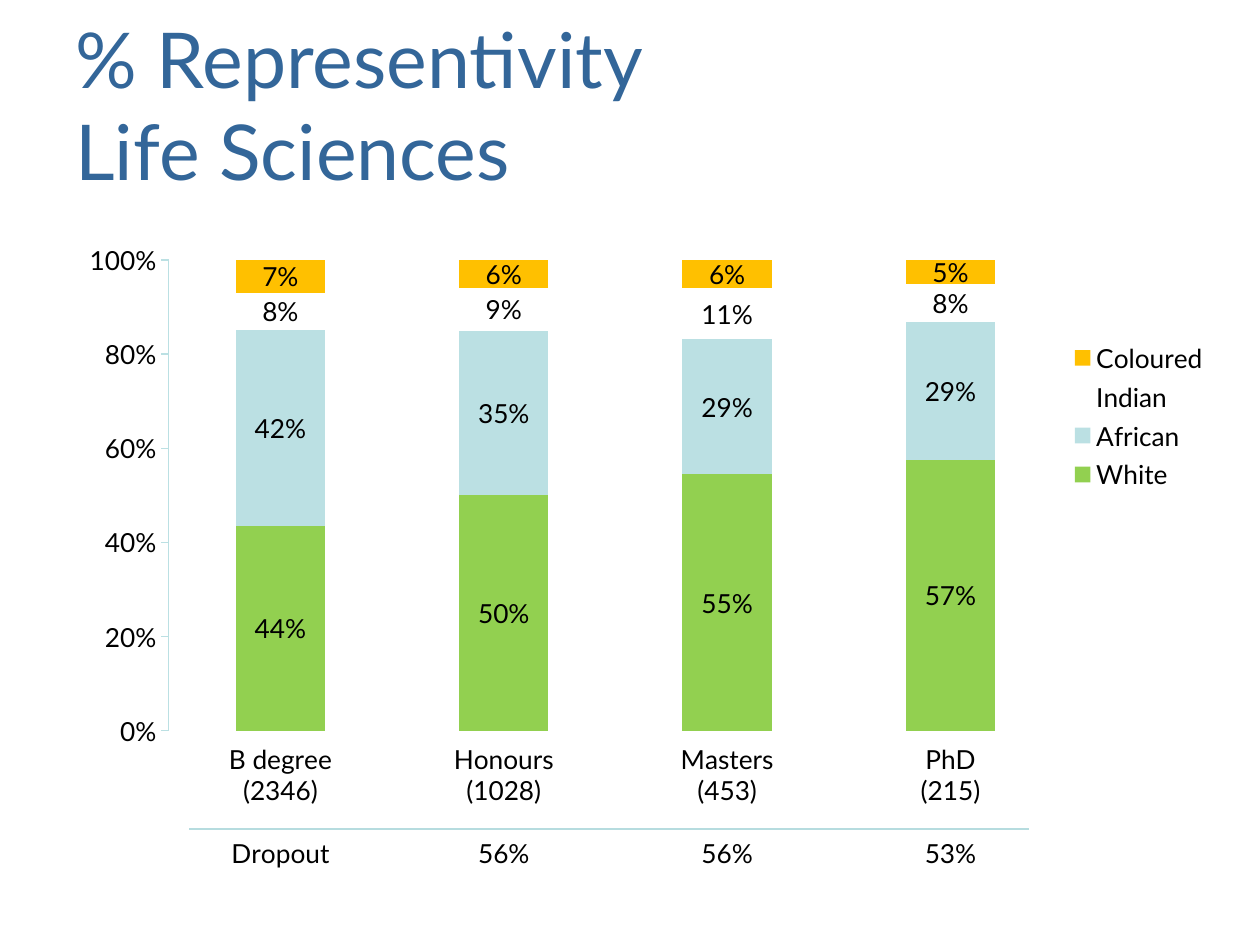
from lxml import etree
from pptx import Presentation
from pptx.chart.data import CategoryChartData as Data
from pptx.dml.color import RGBColor as Rgb
from pptx.enum.chart import XL_CHART_TYPE as Kind
from pptx.enum.chart import XL_LABEL_POSITION as Spot
from pptx.enum.chart import XL_LEGEND_POSITION as Side
from pptx.enum.chart import XL_TICK_MARK as Tick
from pptx.enum.shapes import MSO_CONNECTOR as Link
from pptx.enum.text import MSO_ANCHOR as Anchor
from pptx.oxml.ns import qn
from pptx.util import Cm, Pt

FONT = "Lato"
HUES = {
    "title": "336699", "text": "000000", "axis": "BBE0E3", "rule": "B6DCDF",
    "White": "92D050", "African": "BBE0E3", "Indian": "FFFFFF",
    "Coloured": "FFC000",
}
# Level, head count, dropout
LEVELS = [
    ("B degree", 2346, "Dropout"), ("Honours", 1028, "56%"),
    ("Masters", 453, "56%"), ("PhD", 215, "53%"),
]
SHARES = {
    "White": (0.44, 0.50, 0.55, 0.57),
    "African": (0.42, 0.35, 0.29, 0.29),
    "Indian": (0.08, 0.09, 0.11, 0.08),
    "Coloured": (0.07, 0.06, 0.06, 0.05),
}


def hue(name):
    return Rgb.from_string(HUES[name])


def style(font, size, name="text"):
    font.name, font.size = FONT, Pt(size)
    font.color.rgb = hue(name)


def add_title(slide, lines):
    box = slide.shapes.add_textbox(Cm(1.27), Cm(0.08), Cm(16.94), Cm(4.01))
    frame = box.text_frame
    frame.word_wrap = True
    frame.vertical_anchor = Anchor.MIDDLE
    para = frame.paragraphs[0]
    for i, line in enumerate(lines):
        if i:
            para.add_line_break()
        run = para.add_run()
        run.text = line
        style(run.font, 44, "title")


def make_layout(x, y, w, h, inner=False):
    layout = etree.Element(qn("c:layout"))
    manual = etree.SubElement(layout, qn("c:manualLayout"))
    parts = [("layoutTarget", "inner")] if inner else []
    parts += [("xMode", "edge"), ("yMode", "edge"),
              ("x", x), ("y", y), ("w", w), ("h", h)]
    for tag, val in parts:
        etree.SubElement(manual, qn("c:" + tag)).set("val", str(val))
    return layout


def place_plot(chart):
    area = chart._chartSpace.chart.plotArea
    for old in area.findall(qn("c:layout")):
        area.remove(old)
    area.insert(0, make_layout(0.09, 0.045, 0.76, 0.723, inner=True))


def add_legend(chart):
    chart.has_legend = True
    legend = chart.legend
    legend.position = Side.RIGHT
    legend.include_in_layout = False
    style(legend.font, 15)
    root = legend._element
    for old in root.findall(qn("c:layout")):
        root.remove(old)
    root.find(qn("c:legendPos")).addnext(make_layout(0.84, 0.16, 0.15, 0.25))


def style_axes(chart):
    cats, vals = chart.category_axis, chart.value_axis
    for axis in (cats, vals):
        axis.major_tick_mark = Tick.OUTSIDE
        axis.minor_tick_mark = Tick.NONE
        axis.has_major_gridlines = False
        style(axis.tick_labels.font, 15)
    cats.format.line.fill.background()
    vals.format.line.color.rgb = hue("axis")
    vals.format.line.width = Pt(0.75)
    vals.minimum_scale, vals.maximum_scale = 0, 1
    vals.major_unit = 0.2
    vals.tick_labels.number_format = "0%"
    vals.tick_labels.number_format_is_linked = False


def style_bars(plot):
    plot.gap_width, plot.overlap = 150, 100
    plot.vary_by_categories = False
    for bar in plot.series:
        bar.format.fill.solid()
        bar.format.fill.fore_color.rgb = hue(bar.name)
        labels = bar.data_labels
        labels.show_value = True
        labels.number_format = "0%"
        labels.number_format_is_linked = False
        labels.position = Spot.CENTER
        style(labels.font, 15)


def add_bars(slide):
    data = Data(number_format="0%")
    data.categories = [f"{name}\n({count})\n\n{drop}"
                       for name, count, drop in LEVELS]
    for name, vals in SHARES.items():
        data.add_series(name, vals)
    chart = slide.shapes.add_chart(
        Kind.COLUMN_STACKED_100, Cm(1.27), Cm(4.65), Cm(23.7), Cm(13.13), data
    ).chart
    chart.has_title = False
    style(chart.font, 10)
    style_bars(chart.plots[0])
    style_axes(chart)
    add_legend(chart)
    place_plot(chart)


def add_rule(slide, left, right, y):
    rule = slide.shapes.add_connector(
        Link.STRAIGHT, Cm(left), Cm(y), Cm(right), Cm(y))
    rule.line.color.rgb = hue("rule")
    rule.line.width = Pt(0.75)
    etree.SubElement(rule._element.spPr, qn("a:effectLst"))


def main():
    deck = Presentation()
    deck.slide_width, deck.slide_height = Cm(25.4), Cm(19.05)
    slide = deck.slides.add_slide(deck.slide_layouts[6])
    # Heading
    add_title(slide, ["% Representivity", "Life Sciences"])
    # Shares by level
    add_bars(slide)
    # Rule above the dropout row
    add_rule(slide, 3.81, 20.75, 16.71)
    deck.save("out.pptx")


if __name__ == "__main__":
    main()
